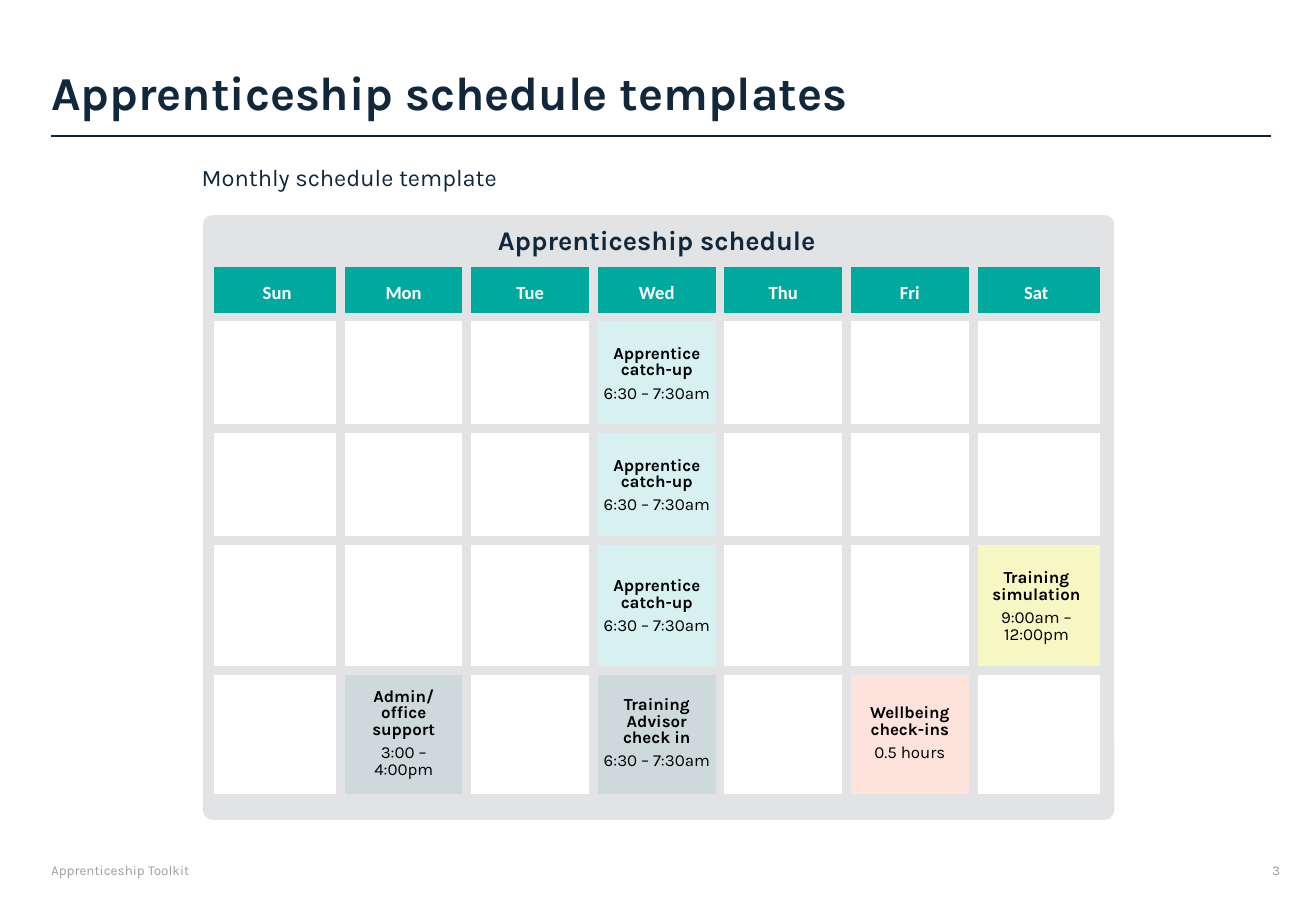
"""Build the monthly apprenticeship schedule slide."""
from lxml.etree import SubElement
from pptx import Presentation
from pptx.dml.color import RGBColor
from pptx.enum.shapes import MSO_CONNECTOR, MSO_SHAPE
from pptx.enum.text import MSO_ANCHOR, PP_ALIGN
from pptx.oxml import parse_xml
from pptx.oxml.ns import nsdecls, qn
from pptx.util import Inches, Pt

NAVY = RGBColor(0x10, 0x27, 0x3C)
GREY_TEXT = RGBColor(0x9B, 0x9D, 0xA1)
PANEL = RGBColor(0xE1, 0xE3, 0xE5)
TEAL = RGBColor(0x00, 0xA9, 0x9D)
WHITE = RGBColor(0xFF, 0xFF, 0xFF)
BLACK = RGBColor(0x00, 0x00, 0x00)
MINT = RGBColor(0xD6, 0xF1, 0xEF)
YELLOW = RGBColor(0xF7, 0xF7, 0xC3)
SLATE = RGBColor(0xCE, 0xD9, 0xDC)
PINK = RGBColor(0xFD, 0xE3, 0xDC)

DAYS = ["Sun", "Mon", "Tue", "Wed", "Thu", "Fri", "Sat"]
ROW_HEIGHTS = [0.41, 0.92, 0.92, 1.07, 1.02]
CATCH_UP = ("Apprentice catch-up", "6:30 – 7:30am", MINT)
EVENTS = {
    (1, "Wed"): CATCH_UP,
    (2, "Wed"): CATCH_UP,
    (3, "Wed"): CATCH_UP,
    (3, "Sat"): ("Training simulation", "9:00am – 12:00pm", YELLOW),
    (4, "Mon"): ("Admin/ office support", "3:00 – 4:00pm", SLATE),
    (4, "Wed"): ("Training Advisor check in", "6:30 – 7:30am", SLATE),
    (4, "Fri"): ("Wellbeing check-ins", "0.5 hours", PINK),
}
TABLE_LEFT, TABLE_TOP, TABLE_WIDTH = 1.76, 2.2, 7.29
LABELS = [
    ("Apprenticeship schedule templates", (0.42, 0.52, 10.05, 0.47), 28, NAVY, True, PP_ALIGN.LEFT),
    ("Monthly schedule template", (1.66, 1.34, 5.42, 0.24), 14, NAVY, False, PP_ALIGN.LEFT),
    ("Apprenticeship schedule", (1.66, 1.84, 7.49, 0.27), 16, NAVY, True, PP_ALIGN.CENTER),
    ("Apprenticeship Toolkit", (0.42, 7.1, 1.91, 0.15), 8, GREY_TEXT, False, PP_ALIGN.LEFT),
    ("3", (10.47, 7.1, 0.36, 0.11), 8, GREY_TEXT, False, PP_ALIGN.LEFT),
]


def add_run(paragraph, text, size, color, bold, font="Karla"):
    run = paragraph.add_run()
    run.text = text
    run.font.name = font
    run.font.size = Pt(size)
    run.font.bold = bold
    run.font.color.rgb = color


def add_label(slide, text, box, size, color, bold, alignment):
    frame = slide.shapes.add_textbox(*map(Inches, box)).text_frame
    frame.word_wrap = True
    frame.margin_left = frame.margin_right = frame.margin_top = frame.margin_bottom = 0
    paragraph = frame.paragraphs[0]
    paragraph.alignment = alignment
    add_run(paragraph, text, size, color, bold)


def set_borders(cell, inner_sides):
    properties = cell._tc.get_or_add_tcPr()
    for index, side in enumerate("LRTB"):
        fill = f'<a:solidFill><a:srgbClr val="{PANEL}"/></a:solidFill>' if side in inner_sides else "<a:noFill/>"
        line = parse_xml(f'<a:ln{side} {nsdecls("a")} w="{Pt(6)}">{fill}</a:ln{side}>')
        properties.insert(index, line)


def fill_cell(cell, row, day):
    cell.margin_left = cell.margin_right = cell.margin_bottom = Inches(0.08)
    cell.margin_top = Inches(0.12)
    cell.fill.solid()
    paragraph = cell.text_frame.paragraphs[0]
    paragraph.alignment = PP_ALIGN.CENTER
    if row == 0:
        cell.fill.fore_color.rgb = TEAL
        add_run(paragraph, day, 11, WHITE, True, "Calibri")
        return
    if (row, day) not in EVENTS:
        cell.fill.fore_color.rgb = WHITE
        return
    name, time, color = EVENTS[row, day]
    cell.fill.fore_color.rgb = color
    cell.vertical_anchor = MSO_ANCHOR.MIDDLE
    time_paragraph = cell.text_frame.add_paragraph()
    for line, text, bold in ((paragraph, name, True), (time_paragraph, time, False)):
        line.alignment = PP_ALIGN.CENTER
        line.line_spacing = Pt(9.8)
        line.space_after = Pt(4)
        add_run(line, text, 10, BLACK, bold)


def add_schedule(slide):
    table = slide.shapes.add_table(
        len(ROW_HEIGHTS), len(DAYS), Inches(TABLE_LEFT), Inches(TABLE_TOP),
        Inches(TABLE_WIDTH), Inches(sum(ROW_HEIGHTS))).table
    table.first_row = table.horz_banding = False
    for column in table.columns:
        column.width = Inches(TABLE_WIDTH / len(DAYS))
    for row, height in enumerate(ROW_HEIGHTS):
        table.rows[row].height = Inches(height)
        for column, day in enumerate(DAYS):
            cell = table.cell(row, column)
            fill_cell(cell, row, day)
            inner = {"L": column > 0, "R": column < len(DAYS) - 1,
                     "T": row > 0, "B": row < len(ROW_HEIGHTS) - 1}
            set_borders(cell, [side for side, shown in inner.items() if shown])


def main():
    presentation = Presentation()
    presentation.slide_width, presentation.slide_height = Inches(10.83), Inches(7.5)
    slide = presentation.slides.add_slide(presentation.slide_layouts[6])

    rule = slide.shapes.add_connector(
        MSO_CONNECTOR.STRAIGHT, Inches(0.42), Inches(1.12), Inches(10.46), Inches(1.12))
    rule.line.color.rgb = NAVY
    rule.line.width = Pt(1)
    SubElement(rule._element.spPr, qn("a:effectLst"))

    panel = slide.shapes.add_shape(
        MSO_SHAPE.ROUNDED_RECTANGLE, Inches(1.67), Inches(1.77), Inches(7.5), Inches(4.98))
    panel.adjustments[0] = 0.016
    panel.shadow.inherit = False
    panel.fill.solid()
    panel.fill.fore_color.rgb = PANEL
    panel.line.fill.background()

    add_schedule(slide)
    for label in LABELS:
        add_label(slide, *label)
    presentation.save("out.pptx")


if __name__ == "__main__":
    main()
